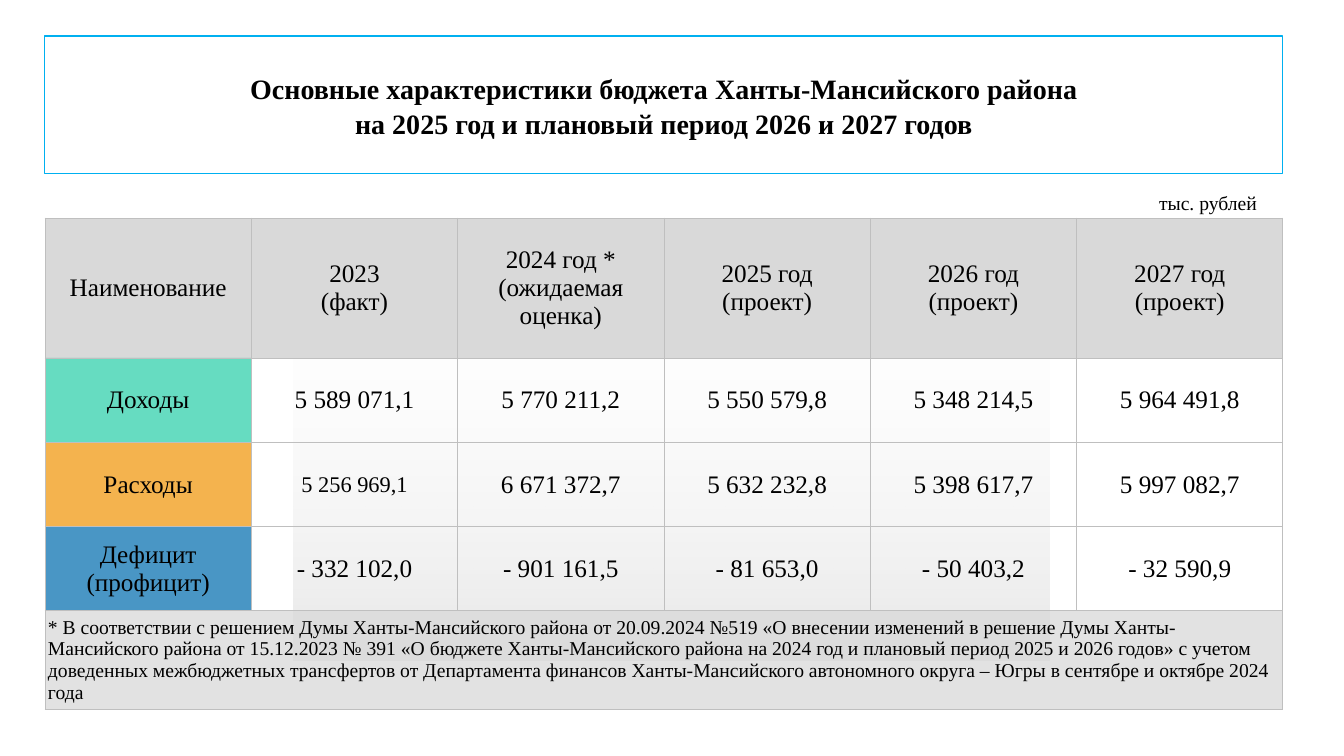
from pptx import Presentation
from pptx.dml.color import RGBColor
from pptx.enum.shapes import MSO_SHAPE as SHAPE
from pptx.enum.text import MSO_ANCHOR as ANCHOR, PP_ALIGN as ALIGN
from pptx.oxml import parse_xml
from pptx.oxml.ns import nsdecls
from pptx.util import Pt

SCALE = 12192000 / 1344
FONT = "Times New Roman"
COLORS = {
    "text": "000000", "white": "FFFFFF", "frame": "00B0F0",
    "border": "BFBFBF", "grey": "D9D9D9",
    "income": "33D1AD", "expense": "F19A14", "deficit": "0D73B2",
}


def px(*lengths):
    return [round(length * SCALE) for length in lengths]


def write(frame, lines, size, align, bold=False, spacing=None):
    frame.word_wrap = True
    for index, line in enumerate(lines):
        para = frame.paragraphs[0] if index == 0 else frame.add_paragraph()
        para.alignment = align
        para.line_spacing = spacing
        span = para.add_run()
        span.text = line
        span.font.name = FONT
        span.font.size = Pt(size)
        span.font.bold = bold
        span.font.color.rgb = RGBColor.from_string(COLORS["text"])


deck = Presentation()
deck.slide_width, deck.slide_height = px(1344, 756)
page = deck.slides.add_slide(deck.slide_layouts[6])

shade = page.shapes.add_shape(SHAPE.RECTANGLE, *px(294, 261, 756, 400))
shade.shadow.inherit = False
shade.line.fill.background()
shade.fill.gradient()
shade.fill.gradient_angle = 90
for stop, color, position in zip(shade.fill.gradient_stops, ("text", "white"), (0, 1)):
    stop.color.rgb = RGBColor.from_string(COLORS[color])
    stop.position = position
for node, alpha in zip(shade.element.xpath("./p:spPr/a:gradFill//a:srgbClr"), (10000, 0)):
    node.append(parse_xml(f'<a:alpha {nsdecls("a")} val="{alpha}"/>'))

unit = page.shapes.add_textbox(*px(1139, 186, 128, 34))
write(unit.text_frame, ["тыс. рублей"], 14, ALIGN.RIGHT)

title = page.shapes.add_textbox(*px(45, 36, 1238, 138))
title.line.color.rgb = RGBColor.from_string(COLORS["frame"])
title.line.width = Pt(0.75)
title.text_frame.vertical_anchor = ANCHOR.MIDDLE
write(title.text_frame, [
    "Основные характеристики бюджета Ханты-Мансийского района",
    "на 2025 год и плановый период 2026 и 2027 годов",
], 20, ALIGN.CENTER, True, 1.05)

footnote = (
    "* В соответствии с решением Думы Ханты-Мансийского района от 20.09.2024 №519 "
    "«О внесении изменений в решение Думы Ханты-Мансийского района от 15.12.2023 № 391 "
    "«О бюджете Ханты-Мансийского района на 2024 год и плановый период 2025 и 2026 годов» "
    "с учетом доведенных межбюджетных трансфертов от Департамента финансов "
    "Ханты-Мансийского автономного округа – Югры в сентябре и октябре 2024 года"
)
rows = [
    ["Наименование", "2023\n(факт)", "2024 год *\n(ожидаемая оценка)",
     "2025 год\n(проект)", "2026 год\n(проект)", "2027 год\n(проект)"],
    ["Доходы", "5 589 071,1", "5 770 211,2", "5 550 579,8", "5 348 214,5", "5 964 491,8"],
    ["Расходы", "5 256 969,1", "6 671 372,7", "5 632 232,8", "5 398 617,7", "5 997 082,7"],
    ["Дефицит (профицит)", "- 332 102,0", "- 901 161,5", "- 81 653,0", "- 50 403,2", "- 32 590,9"],
    [footnote, "", "", "", "", ""],
]
row_colors = ["grey", "income", "expense", "deficit", "grey"]
row_heights = px(140, 85, 84, 84, 90)
last = len(rows) - 1

table = page.shapes.add_table(len(rows), 6, *px(45, 218, 1238, 483)).table
table.first_row = False
table.horz_banding = False
table.cell(last, 0).merge(table.cell(last, 5))

for r, texts in enumerate(rows):
    table.rows[r].height = row_heights[r]
    for c, text in enumerate(texts):
        cell = table.cell(r, c)
        cell.vertical_anchor = ANCHOR.MIDDLE
        cell.margin_left, cell.margin_right, cell.margin_top, cell.margin_bottom = px(3, 3, 2, 2)
        properties = cell._tc.get_or_add_tcPr()
        for side in ("lnL", "lnR", "lnT", "lnB"):
            properties.append(parse_xml(
                f'<a:{side} {nsdecls("a")} w="9525"><a:solidFill>'
                f'<a:srgbClr val="{COLORS["border"]}"/></a:solidFill></a:{side}>'))
        if c == 0 or r in (0, last):
            cell.fill.solid()
            cell.fill.fore_color.rgb = RGBColor.from_string(COLORS[row_colors[r]])
            if r > 0:
                node = properties.xpath("./a:solidFill/a:srgbClr")[0]
                node.append(parse_xml(f'<a:alpha {nsdecls("a")} val="75000"/>'))
        else:
            cell.fill.background()
        if text:
            size = 14 if r == last else 16 if (r, c) == (2, 1) else 18
            align = ALIGN.LEFT if r == last else ALIGN.CENTER
            write(cell.text_frame, text.split("\n"), size, align)

deck.save("out.pptx")
